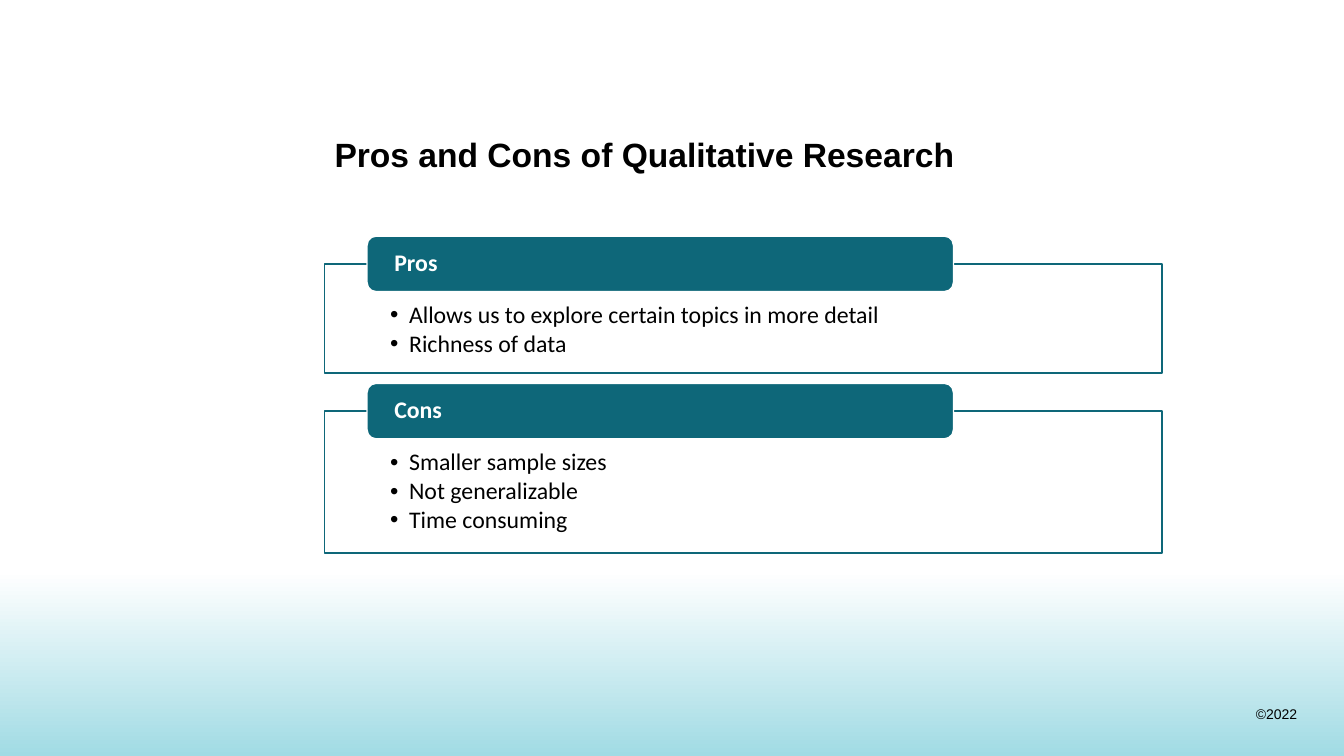
from dataclasses import dataclass

from lxml.etree import SubElement
from pptx import Presentation
from pptx.dml.color import RGBColor as Rgb
from pptx.enum.shapes import MSO_SHAPE as Shape
from pptx.enum.text import MSO_ANCHOR as Anchor, PP_ALIGN as Align
from pptx.oxml.ns import qn
from pptx.util import Cm, Pt


@dataclass(frozen=True)
class Theme:
    teal: Rgb = Rgb(0x0E, 0x67, 0x79)
    aqua: Rgb = Rgb(0xA1, 0xDB, 0xE4)
    white: Rgb = Rgb(0xFF, 0xFF, 0xFF)
    black: Rgb = Rgb(0, 0, 0)
    title_font: str = "Arial"
    body_font: str = "Calibri"
    title_size: int = 24
    body_size: int = 17
    footer_size: int = 10


class ResearchSlide:
    def __init__(self, deck, theme):
        self.theme = theme
        self.slide = deck.slides.add_slide(deck.slide_layouts[5])

    def place(self, shape, left, top, width, height):
        shape.left, shape.top = Cm(left), Cm(top)
        shape.width, shape.height = Cm(width), Cm(height)

    def add_words(self, paragraph, wording, font, size, color, bold=False):
        run = paragraph.add_run()
        run.text = wording
        run.font.name, run.font.size = font, Pt(size)
        run.font.bold = bold
        run.font.color.rgb = color

    def inset(self, frame, left, top, right, bottom):
        frame.margin_left, frame.margin_top = Cm(left), Cm(top)
        frame.margin_right, frame.margin_bottom = Cm(right), Cm(bottom)

    def title(self, wording, *place):
        heading = self.slide.shapes.title
        self.place(heading, *place)
        frame = heading.text_frame
        frame.word_wrap = True
        frame.vertical_anchor = Anchor.TOP
        self.inset(frame, 0.25, 0.13, 0.25, 0.13)
        line = frame.paragraphs[0]
        line.alignment = Align.LEFT
        self.add_words(line, wording, self.theme.title_font,
                       self.theme.title_size, self.theme.black, bold=True)

    def box(self, kind, fill, outline, *place):
        shape = self.slide.shapes.add_shape(kind, *map(Cm, place))
        shape.shadow.inherit = False
        shape.fill.solid()
        shape.fill.fore_color.rgb = fill
        shape.line.color.rgb = outline
        shape.line.width = Pt(1)
        shape.text_frame.word_wrap = True
        return shape

    def band(self, *place):
        glow = self.slide.shapes.add_shape(Shape.RECTANGLE, *map(Cm, place))
        glow.shadow.inherit = False
        glow.line.fill.background()
        glow.fill.gradient()
        glow.fill.gradient_angle = 270
        for stop, color in zip(glow.fill.gradient_stops,
                               (self.theme.white, self.theme.aqua)):
            stop.color.rgb = color

    def footer(self, wording, *place):
        notice = self.slide.shapes.add_textbox(*map(Cm, place))
        notice.text_frame.word_wrap = False
        line = notice.text_frame.paragraphs[0]
        line.alignment = Align.RIGHT
        self.add_words(line, wording, self.theme.title_font,
                       self.theme.footer_size, self.theme.black)

    def bullet(self, paragraph, wording):
        paragraph.level = 1
        paragraph.alignment = Align.LEFT
        paragraph.line_spacing = 0.9
        paragraph.space_after = Pt(2.3)
        props = paragraph._p.get_or_add_pPr()
        props.set("marL", str(Cm(0.48)))
        props.set("indent", str(-Cm(0.48)))
        SubElement(props, qn("a:buFont"), typeface="Arial")
        SubElement(props, qn("a:buChar"), char="•")
        self.add_words(paragraph, wording, self.theme.body_font,
                       self.theme.body_size, self.theme.black)

    def panel(self, heading, points, top, height):
        theme = self.theme
        body = self.box(Shape.RECTANGLE, theme.white, theme.teal,
                        8.18, top, 21.11, height)
        color = body.element.spPr.find(qn("a:solidFill"))[0]
        SubElement(color, qn("a:alpha"), val="90000")
        frame = body.text_frame
        frame.vertical_anchor = Anchor.TOP
        self.inset(frame, 1.65, 0.99, 1.65, 0.33)
        for index, point in enumerate(points):
            line = frame.add_paragraph() if index else frame.paragraphs[0]
            self.bullet(line, point)

        tab = self.box(Shape.ROUNDED_RECTANGLE, theme.teal, theme.white,
                       9.25, top - 0.7, 14.78, 1.4)
        tab.text_frame.vertical_anchor = Anchor.MIDDLE
        self.inset(tab.text_frame, 0.62, 0, 0.62, 0)
        label = tab.text_frame.paragraphs[0]
        label.alignment = Align.LEFT
        label.line_spacing = 0.9
        self.add_words(label, heading, theme.body_font, theme.body_size,
                       theme.white, bold=True)


def main():
    deck = Presentation()
    deck.slide_width, deck.slide_height = Cm(33.87), Cm(19.05)
    page = ResearchSlide(deck, Theme())
    page.band(0, 14.4, 33.87, 4.65)
    page.footer("©2022", 31.39, 17.65, 1.55, 0.69)
    page.title("Pros and Cons of Qualitative Research", 8.18, 3.25, 21.11, 1.83)
    page.panel("Pros", ["Allows us to explore certain topics in more detail",
                        "Richness of data"], 6.65, 2.75)
    page.panel("Cons", ["Smaller sample sizes", "Not generalizable",
                        "Time consuming"], 10.36, 3.58)
    deck.save("out.pptx")


if __name__ == "__main__":
    main()
